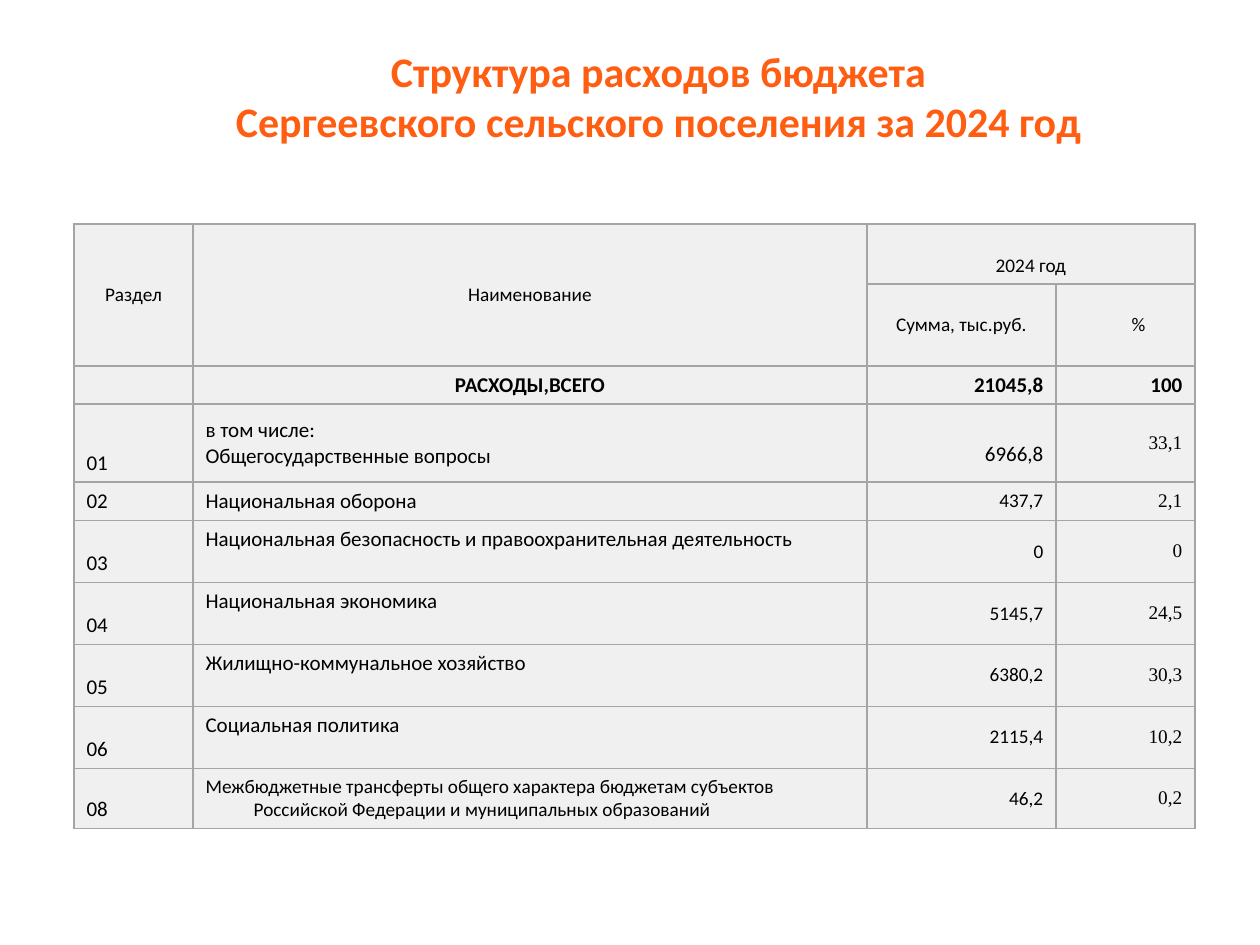
"""Build the slide with the 2024 budget spending table."""
from lxml import etree
from pptx import Presentation, util as u
from pptx.dml.color import RGBColor
from pptx.enum import text as t
from pptx.oxml.ns import qn

TITLE = ["Структура расходов бюджета", "Сергеевского сельского поселения за 2024 год"]
TOTAL = ("РАСХОДЫ,ВСЕГО", "21045,8", "100")
ROWS = [
    ("01", "в том числе:\nОбщегосударственные вопросы", "6966,8", "33,1"),
    ("02", "Национальная оборона", "437,7", "2,1"),
    ("03", "Национальная безопасность и правоохранительная деятельность", "0", "0"),
    ("04", "Национальная экономика", "5145,7", "24,5"),
    ("05", "Жилищно-коммунальное хозяйство", "6380,2", "30,3"),
    ("06", "Социальная политика", "2115,4", "10,2"),
    ("08", "Межбюджетные трансферты общего характера бюджетам субъектов "
           "Российской Федерации и муниципальных образований", "46,2", "0,2"),
]
COLS = [119, 674, 189, 139]
HIGHS = [60, 82, 38, 78, 38, 62, 62, 62, 62, 60]
LEFT, TOP = 74, 224
ORANGE = RGBColor(0xFF, 0x5D, 0x12)
BLACK = RGBColor(0, 0, 0)
PALE = RGBColor(0xF0, 0xF0, 0xF0)
GREY = RGBColor(0xA5, 0xA5, 0xA5)
A, P = t.MSO_ANCHOR, t.PP_ALIGN


def px(n):
    return u.Inches(n / 126)


def font(par, size, color, bold=False, face="Calibri"):
    f = par.font
    f.size, f.bold, f.name = u.Pt(size), bold, face
    f.color.rgb = color


def frame(cell):
    props = cell._tc.get_or_add_tcPr()
    for side in ("lnL", "lnR", "lnT", "lnB"):
        line = etree.SubElement(props, qn("a:" + side), w=str(u.Pt(1)))
        fill = etree.SubElement(line, qn("a:solidFill"))
        etree.SubElement(fill, qn("a:srgbClr"), val=str(GREY))
    cell.fill.solid()
    cell.fill.fore_color.rgb = PALE


def write(cell, words, size=11, align=P.LEFT, anchor=A.MIDDLE,
          bold=False, face="Calibri", inset=48):
    cell.text = words
    cell.vertical_anchor = anchor
    for par in cell.text_frame.paragraphs:
        par.alignment = align
        font(par, size, BLACK, bold, face)
        props = par._p.get_or_add_pPr()
        props.set("marL", str(px(inset)))
        props.set("indent", str(-px(48)))


def head(grid):
    grid.cell(0, 0).merge(grid.cell(1, 0))
    grid.cell(0, 1).merge(grid.cell(1, 1))
    grid.cell(0, 2).merge(grid.cell(0, 3))
    write(grid.cell(0, 0), "Раздел", align=P.CENTER)
    write(grid.cell(0, 1), "Наименование", align=P.CENTER)
    write(grid.cell(0, 2), "2024 год", align=P.CENTER, anchor=A.BOTTOM)
    write(grid.cell(1, 2), "Сумма, тыс.руб.", align=P.CENTER)
    write(grid.cell(1, 3), "%", inset=111)
    blank = grid.cell(2, 0).text_frame.paragraphs[0]
    etree.SubElement(blank._p, qn("a:endParaRPr"), sz="1200")
    for col, words in enumerate(TOTAL, 1):
        side = P.CENTER if col == 1 else P.RIGHT
        write(grid.cell(2, col), words, 12, side, A.BOTTOM, True)


def body(grid):
    for row, (code, name, cost, share) in enumerate(ROWS, 3):
        first, last = row == 3, row == len(HIGHS) - 1
        write(grid.cell(row, 0), code, 12, anchor=A.BOTTOM)
        write(grid.cell(row, 1), name, 11 if last else 12,
              anchor=A.MIDDLE if first else A.TOP)
        write(grid.cell(row, 2), cost, 12 if first else 11, P.RIGHT)
        write(grid.cell(row, 3), share, align=P.RIGHT, face="Times New Roman")
    grid.cell(3, 2).margin_top = px(29)


def main():
    deck = Presentation()
    deck.slide_width, deck.slide_height = px(1260), px(945)
    slide = deck.slides.add_slide(deck.slide_layouts[5])

    title = slide.shapes.title
    title.left, title.top, title.width, title.height = map(px, (123, 35, 1071, 158))
    box = title.text_frame
    box.text = "\n".join(TITLE)
    box.auto_size = t.MSO_AUTO_SIZE.NONE
    box.vertical_anchor = A.TOP
    box.margin_top = px(10)
    for par in box.paragraphs:
        par.alignment = P.CENTER
        par.space_before = u.Pt(0)
        font(par, 24, ORANGE, True)

    area = map(px, (LEFT, TOP, sum(COLS), sum(HIGHS)))
    grid = slide.shapes.add_table(len(HIGHS), len(COLS), *area).table
    grid.first_row = grid.horz_banding = False
    for col, wide in zip(grid.columns, COLS):
        col.width = px(wide)
    for row, high in zip(grid.rows, HIGHS):
        row.height = px(high)
        for cell in row.cells:
            frame(cell)
    head(grid)
    body(grid)
    deck.save("out.pptx")


if __name__ == "__main__":
    main()
